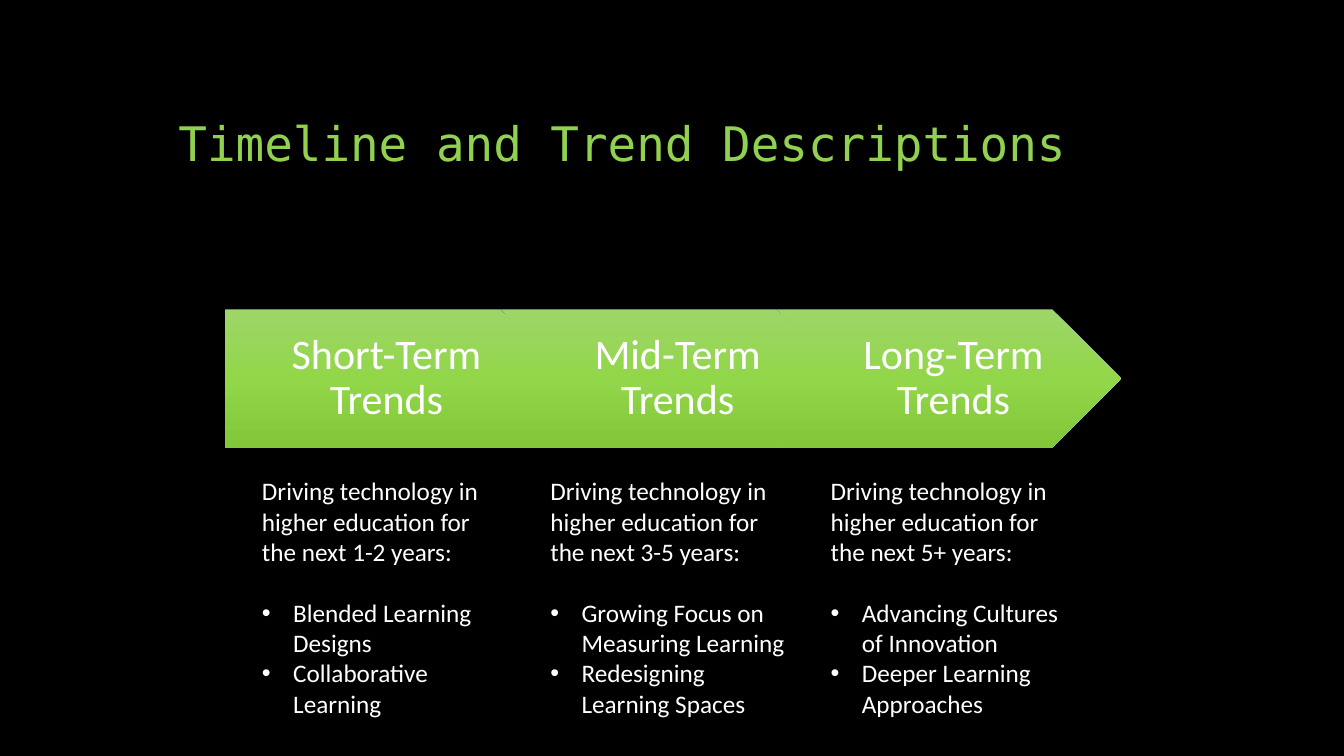
from copy import deepcopy

from pptx import Presentation
from pptx.dml.color import RGBColor
from pptx.enum import shapes, text
from pptx.oxml import parse_xml
from pptx.oxml.ns import nsdecls, qn
from pptx.util import Inches, Pt

# Content
TITLE = "Timeline and Trend Descriptions"
TERMS = [
    # heading, description, trends, left of the description
    ("Short-Term Trends", "Driving technology in higher education for the next 1-2 years:",
     ["Blended Learning Designs", "Collaborative Learning"], 2.5),
    ("Mid-Term Trends", "Driving technology in higher education for the next 3-5 years:",
     ["Growing Focus on Measuring Learning", "Redesigning Learning Spaces"], 5.36),
    ("Long-Term Trends", "Driving technology in higher education for the next 5+ years:",
     ["Advancing Cultures of Innovation", "Deeper Learning Approaches"], 8.14),
]

# Colours and fonts
BLACK = RGBColor(0x00, 0x00, 0x00)
WHITE = RGBColor(0xFF, 0xFF, 0xFF)
GREEN = RGBColor(0x92, 0xD0, 0x50)
GRADIENT = [
    (0, RGBColor(0x9E, 0xD6, 0x69)),
    (0.5, RGBColor(0x92, 0xD6, 0x4A)),
    (1, RGBColor(0x82, 0xC6, 0x3A)),
]
TITLE_FONT, BODY_FONT = "DejaVu Sans Mono", "Calibri"

# Layout in inches: each arrow starts a fifth of its length before the last one ends
ARROW_LEFT, ARROW_TOP = 2.23, 3.07
ARROW_WIDTH, ARROW_HEIGHT = 3.42, 1.37
ARROW_STEP = ARROW_WIDTH * 0.8
DETAIL_TOP, DETAIL_WIDTH, DETAIL_HEIGHT = 4.67, 2.58, 2.52
BULLET_INDENT = Inches(0.31)


def format_runs(paragraph, font_name, size, color):
    for run in paragraph.runs:
        run.font.name = font_name
        run.font.size = Pt(size)
        run.font.color.rgb = color


def fill_gradient(shape):
    shape.fill.gradient()
    shape.fill.gradient_angle = 270
    stop_list = shape.fill._xPr.find(qn("a:gradFill")).find(qn("a:gsLst"))
    stop_list.insert(1, deepcopy(stop_list[0]))
    for stop, (position, color) in zip(shape.fill.gradient_stops, GRADIENT):
        stop.position = position
        stop.color.rgb = color


def add_arrow(slide, index, heading):
    kind = shapes.MSO_SHAPE.CHEVRON if index else shapes.MSO_SHAPE.PENTAGON
    arrow = slide.shapes.add_shape(
        kind, Inches(ARROW_LEFT + index * ARROW_STEP), Inches(ARROW_TOP),
        Inches(ARROW_WIDTH), Inches(ARROW_HEIGHT))
    arrow.shadow.inherit = False
    arrow.line.fill.background()
    fill_gradient(arrow)
    frame = arrow.text_frame
    frame.text = heading
    frame.word_wrap = True
    frame.vertical_anchor = text.MSO_ANCHOR.MIDDLE
    frame.margin_left = Inches(0.13 if index else 0.17)
    frame.margin_right = Inches(0.04)
    frame.margin_top = frame.margin_bottom = Inches(0.09)
    paragraph = frame.paragraphs[0]
    paragraph.alignment = text.PP_ALIGN.CENTER
    paragraph.line_spacing = 0.9
    format_runs(paragraph, BODY_FONT, 30, WHITE)


def add_bullet(paragraph):
    properties = paragraph._p.get_or_add_pPr()
    properties.set("marL", str(BULLET_INDENT))
    properties.set("indent", str(-BULLET_INDENT))
    properties.append(parse_xml(f'<a:buFont {nsdecls("a")} typeface="Arial"/>'))
    properties.append(parse_xml(f'<a:buChar {nsdecls("a")} char="•"/>'))


def add_details(slide, left, description, trends):
    box = slide.shapes.add_textbox(
        Inches(left), Inches(DETAIL_TOP), Inches(DETAIL_WIDTH), Inches(DETAIL_HEIGHT))
    frame = box.text_frame
    frame.word_wrap = True
    frame.auto_size = text.MSO_AUTO_SIZE.SHAPE_TO_FIT_TEXT
    frame.text = "\n".join([description, *trends])
    introduction, *bullets = frame.paragraphs
    introduction.space_after = Pt(22)
    for paragraph in bullets:
        add_bullet(paragraph)
    for paragraph in frame.paragraphs:
        format_runs(paragraph, BODY_FONT, 18, WHITE)


def main():
    presentation = Presentation()
    presentation.slide_width = Inches(13.33)
    presentation.slide_height = Inches(7.5)
    slide = presentation.slides.add_slide(presentation.slide_layouts[5])
    slide.background.fill.solid()
    slide.background.fill.fore_color.rgb = BLACK

    # Title
    title = slide.shapes.title
    title.left, title.top = Inches(1.67), Inches(0.5)
    title.width, title.height = Inches(10), Inches(1.25)
    title.text_frame.text = TITLE
    title.text_frame.vertical_anchor = text.MSO_ANCHOR.BOTTOM
    heading = title.text_frame.paragraphs[0]
    heading.alignment = text.PP_ALIGN.LEFT
    heading.line_spacing = 0.9
    format_runs(heading, TITLE_FONT, 34, GREEN)

    # Timeline arrows with the trends below
    for index, (term, description, trends, left) in enumerate(TERMS):
        add_arrow(slide, index, term)
        add_details(slide, left, description, trends)

    presentation.save("out.pptx")


if __name__ == "__main__":
    main()
